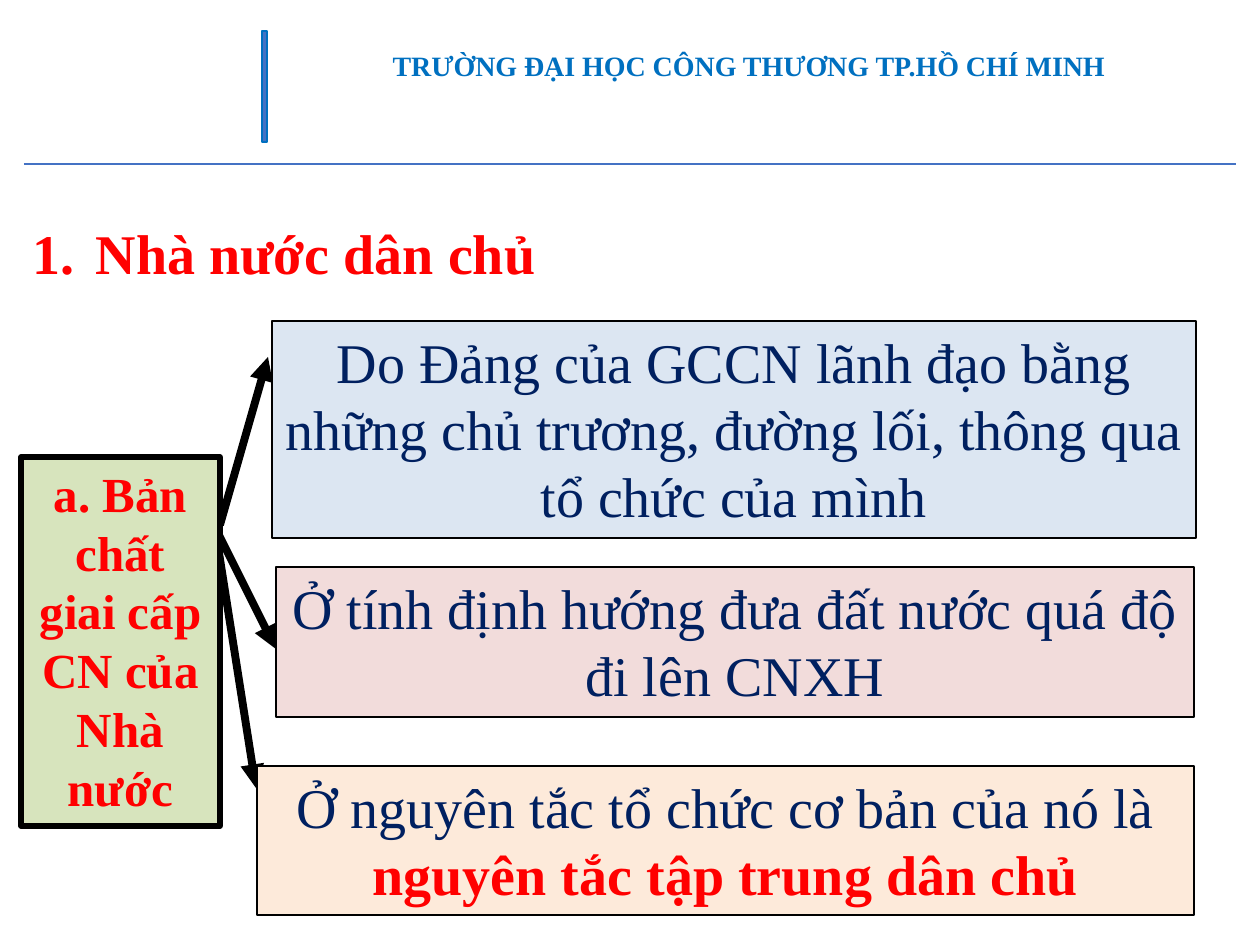
from pptx import Presentation
from pptx.dml.color import RGBColor
from pptx.enum.shapes import MSO_CONNECTOR as Conn, MSO_SHAPE as Shape
from pptx.enum.text import MSO_ANCHOR as Anchor, MSO_AUTO_SIZE as Fit, PP_ALIGN as Align
from pptx.oxml.ns import qn
from pptx.util import Emu, Pt
from lxml.etree import SubElement

DPI = 126
FONT = "Times New Roman"
COLORS = {
    "black": "000000",
    "red": "FF0000",
    "title": "FF0101",
    "navy": "002060",
    "blue": "0070C0",
    "rule": "4472C4",
    "green": "D7E4BD",
    "sky": "DCE6F2",
    "rose": "F2DCDB",
    "peach": "FDEADA",
}


def px(n):
    return Emu(round(n * 914400 / DPI))


def rgb(name):
    return RGBColor.from_string(COLORS[name])


def style(font, size, color, bold=False):
    font.name = FONT
    font.size = Pt(size)
    font.bold = bold
    font.color.rgb = rgb(color)


def add_line(slide, start, end, color, width, arrow=False):
    line = slide.shapes.add_connector(Conn.STRAIGHT, *map(px, start + end))
    line.line.color.rgb = rgb(color)
    line.line.width = Pt(width)
    if arrow:
        SubElement(line.line._get_or_add_ln(), qn("a:tailEnd"), type="triangle")
    SubElement(line._element.spPr, qn("a:effectLst"))


def add_rect(slide, area, fill, edge, width):
    rect = slide.shapes.add_shape(Shape.RECTANGLE, *map(px, area))
    rect.shadow.inherit = False
    rect.fill.solid()
    rect.fill.fore_color.rgb = rgb(fill)
    rect.line.color.rgb = rgb(edge)
    rect.line.width = Pt(width)
    return rect


def add_box(slide, area, fill, runs, size, width=1.5):
    frame = add_rect(slide, area, fill, "black", width).text_frame
    frame.word_wrap = True
    frame.vertical_anchor = Anchor.TOP
    para = frame.paragraphs[0]
    para.alignment = Align.CENTER
    for text, color, bold in runs:
        run = para.add_run()
        run.text = text
        style(run.font, size, color, bold)


def set_title(slide, area, text):
    title = slide.shapes.title
    title.left, title.top, title.width, title.height = map(px, area)
    frame = title.text_frame
    frame.text = text
    frame.auto_size = Fit.NONE
    frame.vertical_anchor = Anchor.TOP
    para = frame.paragraphs[0]
    para.alignment = Align.LEFT
    props = para._p.get_or_add_pPr()
    props.set("marL", str(px(63)))
    props.set("indent", str(-px(63)))
    SubElement(props, qn("a:buFont"), typeface="+mj-lt")
    SubElement(props, qn("a:buAutoNum"), type="arabicPeriod")
    style(para.runs[0].font, 32, "title", True)


def add_head(slide, area, text):
    frame = slide.shapes.add_textbox(*map(px, area)).text_frame
    frame.word_wrap = True
    frame.vertical_anchor = Anchor.MIDDLE
    frame.text = text
    para = frame.paragraphs[0]
    para.alignment = Align.CENTER
    style(para.runs[0].font, 16, "blue", True)


def main():
    deck = Presentation()
    deck.slide_width, deck.slide_height = px(1260), px(945)
    slide = deck.slides.add_slide(deck.slide_layouts[5])

    set_title(slide, (20, 212, 1027, 81), "Nhà nước dân chủ")

    arrows = [
        ((220, 525), (268, 357)),
        ((214, 525), (276, 649)),
        ((208, 483), (256, 788)),
    ]
    for start, end in arrows:
        add_line(slide, start, end, "black", 4.5, True)

    cause = [("a. Bản chất giai cấp CN của Nhà nước", "red", True)]
    add_box(slide, (21, 457, 199, 369), "green", cause, 28, 3)

    points = [
        ((272, 321, 924, 217), "sky", [
            ("Do Đảng của GCCN lãnh đạo bằng những chủ trương, "
             "đường lối, thông qua tổ chức của mình", "navy", False)]),
        ((276, 567, 918, 150), "rose", [
            ("Ở tính định hướng đưa đất nước quá độ đi lên CNXH", "navy", False)]),
        ((257, 766, 937, 149), "peach", [
            ("Ở nguyên tắc tổ chức cơ bản của nó là ", "navy", False),
            ("nguyên tắc tập trung dân chủ", "red", True)]),
    ]
    for area, fill, runs in points:
        add_box(slide, area, fill, runs, 32)

    add_line(slide, (24, 164), (1236, 164), "rule", 1.5)
    add_rect(slide, (262, 31, 5, 111), "rule", "blue", 1)
    add_head(slide, (267, 13, 964, 104), "TRƯỜNG ĐẠI HỌC CÔNG THƯƠNG TP.HỒ CHÍ MINH")

    deck.save("out.pptx")


if __name__ == "__main__":
    main()
